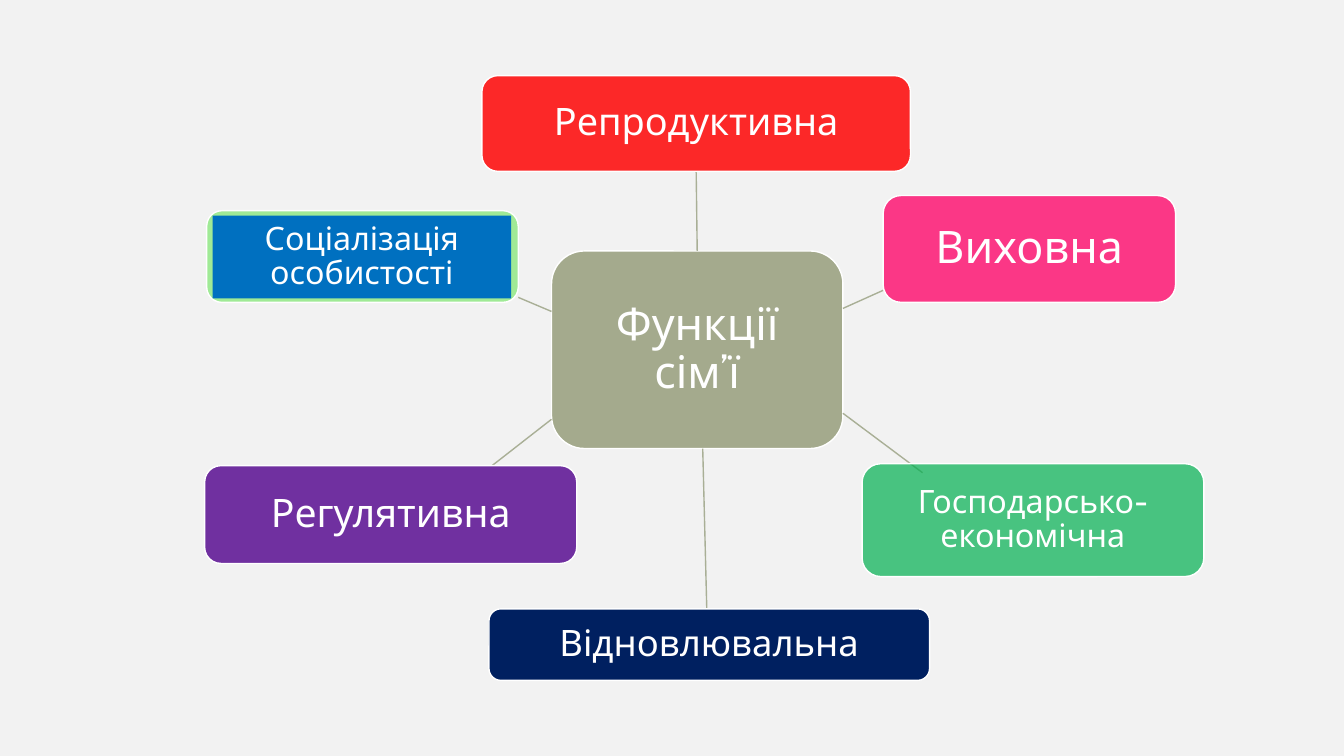
"""Builds a slide with a hub-and-spoke diagram of the functions of the family."""
from dataclasses import dataclass

from pptx import Presentation
from pptx.dml.color import RGBColor
from pptx.enum.shapes import MSO_CONNECTOR as Connector, MSO_SHAPE as Preset
from pptx.enum.text import MSO_ANCHOR as Anchor, PP_ALIGN as Align
from pptx.oxml.ns import qn
from pptx.util import Inches, Pt
from lxml.etree import SubElement


@dataclass(frozen=True)
class Theme:
    font: str = "Cabin"
    background: str = "F2F2F2"
    white: str = "FFFFFF"
    spoke: str = "A9AF96"
    hub: str = "9CA383"
    panel: str = "0070C0"
    large: int = 32
    small: int = 23
    line_width: int = 1


THEME = Theme()
HUB = dict(text="Функції сім’ї", box=(5.47, 2.49, 2.89, 1.96),
           color=THEME.hub, opacity=90, size=THEME.large)
FUNCTIONS = [
    dict(text="Репродуктивна", box=(4.78, 0.75, 4.25, 0.95), color="FF0000",
         opacity=83, size=27, spoke=(6.91, 2.49, 6.91, 1.7), hub_side=0, card_side=2),
    dict(text="Виховна", box=(8.76, 1.94, 2.9, 1.06), color="FF0066",
         opacity=77, size=THEME.large, spoke=(8.36, 3.06, 8.76, 2.88)),
    dict(text="Господарсько-економічна", box=(8.55, 4.6, 3.39, 1.12), color="00B050",
         opacity=70, size=THEME.small, spoke=(8.36, 4.1, 9.15, 4.69)),
    dict(text="Відновлювальна", box=(4.85, 6.04, 4.37, 0.71), color="002060",
         size=26, spoke=(6.97, 4.45, 7.01, 6.04)),
    dict(text="Регулятивна", box=(2.03, 4.62, 3.69, 0.97), color="7030A0",
         size=28, spoke=(5.47, 4.16, 4.88, 4.62)),
    dict(text="Соціалізація особистості", box=(2.05, 2.09, 3.09, 0.91), color="50E43C",
         opacity=50, size=THEME.small, spoke=(5.47, 3.09, 5.14, 2.95),
         panel=(2.11, 2.14, 2.96, 0.82)),
]


def inches(values):
    return [Inches(value) for value in values]


def add_block(slide, preset, box, color, opacity=100):
    block = slide.shapes.add_shape(preset, *inches(box))
    block.shadow.inherit = False
    block.fill.solid()
    block.fill.fore_color.rgb = RGBColor.from_string(color)
    if opacity < 100:
        tint = block.fill._xPr.find(qn("a:solidFill"))[0]
        SubElement(tint, qn("a:alpha"), val=str(opacity * 1000))
    return block


def write_label(block, text, size):
    frame = block.text_frame
    frame.word_wrap = True
    frame.vertical_anchor = Anchor.MIDDLE
    frame.margin_left = frame.margin_right = Inches(0.07)
    frame.margin_top = frame.margin_bottom = Inches(0.07)
    label = frame.paragraphs[0]
    label.text = text
    label.alignment = Align.CENTER
    label.line_spacing = 0.9
    label.font.name = THEME.font
    label.font.size = Pt(size)
    label.font.color.rgb = RGBColor.from_string(THEME.white)


def add_card(slide, content):
    card = add_block(slide, Preset.ROUNDED_RECTANGLE, content["box"],
                     content["color"], content.get("opacity", 100))
    card.line.color.rgb = RGBColor.from_string(THEME.white)
    card.line.width = Pt(THEME.line_width)
    label_block = card
    if "panel" in content:
        label_block = add_block(slide, Preset.RECTANGLE, content["panel"], THEME.panel)
        label_block.line.fill.background()
    write_label(label_block, content["text"], content["size"])
    return card


def add_spoke(slide, ends):
    spoke = slide.shapes.add_connector(Connector.STRAIGHT, *inches(ends))
    spoke.line.color.rgb = RGBColor.from_string(THEME.spoke)
    spoke.line.width = Pt(THEME.line_width)
    SubElement(spoke._element.spPr, qn("a:effectLst"))
    return spoke


def main():
    deck = Presentation()
    deck.slide_width, deck.slide_height = inches((13.33, 7.5))
    slide = deck.slides.add_slide(deck.slide_layouts[6])
    slide.background.fill.solid()
    slide.background.fill.fore_color.rgb = RGBColor.from_string(THEME.background)

    hub = add_card(slide, HUB)
    for function in FUNCTIONS:
        spoke = add_spoke(slide, function["spoke"])
        card = add_card(slide, function)
        if "hub_side" in function:
            spoke.begin_connect(hub, function["hub_side"])
            spoke.end_connect(card, function["card_side"])
    deck.save("out.pptx")


if __name__ == "__main__":
    main()
